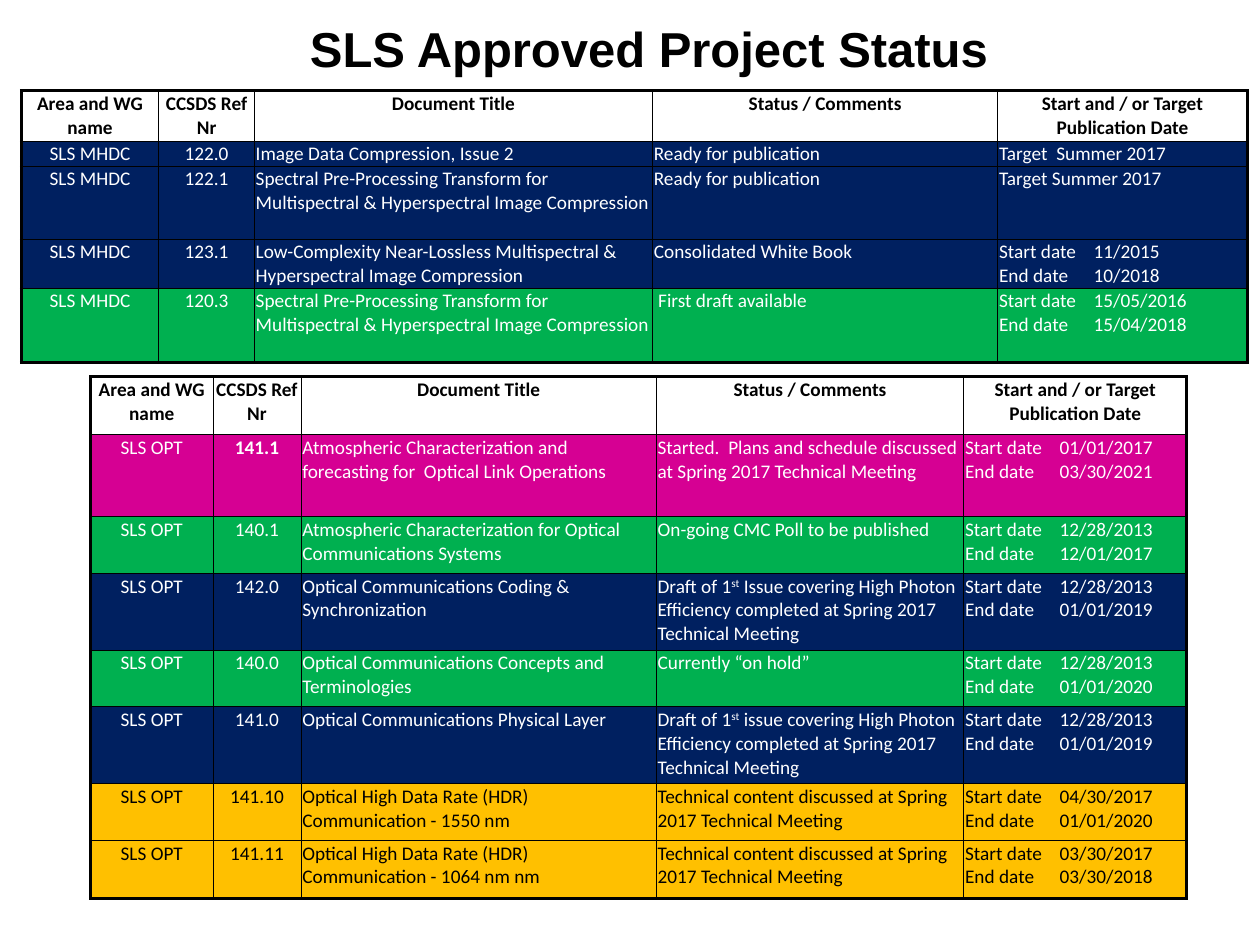
from lxml import etree
from pptx import Presentation
from pptx.dml.color import RGBColor
from pptx.enum import text
from pptx.oxml import ns
from pptx.util import Inches, Pt

BLACK = RGBColor(0x00, 0x00, 0x00)
WHITE = RGBColor(0xFF, 0xFF, 0xFF)
NAVY = RGBColor(0x00, 0x20, 0x60)
GREEN = RGBColor(0x00, 0xB0, 0x50)
MAGENTA = RGBColor(0xD6, 0x00, 0x93)
AMBER = RGBColor(0xFF, 0xC0, 0x00)

INNER_LINE, OUTER_LINE = Pt(0.5), Pt(2)
DATE_TAB = Inches(0.75)
NEW_PROJECT = "141.1"

HEADINGS = ["Area and WG name", "CCSDS Ref Nr", "Document Title",
            "Status / Comments", "Start and / or Target Publication Date"]
SPECTRAL = ("Spectral Pre-Processing Transform for Multispectral & "
            "Hyperspectral Image Compression")
HDR_STATUS = "Technical content discussed at Spring 2017 Technical Meeting"
# Text between carets is superscript.
DRAFT_STATUS = ("Draft of 1^st^ {} covering High Photon Efficiency "
                "completed at Spring 2017 Technical Meeting")


def period(start, end):
    return f"Start date\t{start}\vEnd date\t{end}"


# Each project: row colour, reference, title, status, dates
MHDC_PROJECTS = [
    (NAVY, "122.0", "Image Data Compression, Issue 2",
     "Ready for publication", "Target  Summer 2017"),
    (NAVY, "122.1", SPECTRAL, "Ready for publication", "Target Summer 2017"),
    (NAVY, "123.1",
     "Low-Complexity Near-Lossless Multispectral & Hyperspectral Image Compression",
     "Consolidated White Book", period("11/2015", "10/2018")),
    (GREEN, "120.3", SPECTRAL, " First draft available",
     period("15/05/2016", "15/04/2018")),
]
OPT_PROJECTS = [
    (MAGENTA, NEW_PROJECT,
     "Atmospheric Characterization and forecasting for  Optical Link Operations",
     "Started.  Plans and schedule discussed at Spring 2017 Technical Meeting",
     period("01/01/2017", "03/30/2021")),
    (GREEN, "140.1",
     "Atmospheric Characterization for Optical Communications Systems",
     "On-going CMC Poll to be published", period("12/28/2013", "12/01/2017")),
    (NAVY, "142.0", "Optical Communications Coding & Synchronization",
     DRAFT_STATUS.format("Issue"), period("12/28/2013", "01/01/2019")),
    (GREEN, "140.0", "Optical Communications Concepts and Terminologies",
     "Currently “on hold”", period("12/28/2013", "01/01/2020")),
    (NAVY, "141.0", "Optical Communications Physical Layer",
     DRAFT_STATUS.format("issue"), period("12/28/2013", "01/01/2019")),
    (AMBER, "141.10", "Optical High Data Rate (HDR) Communication - 1550 nm",
     HDR_STATUS, period("04/30/2017", "01/01/2020")),
    (AMBER, "141.11", "Optical High Data Rate (HDR) Communication - 1064 nm nm",
     HDR_STATUS, period("03/30/2017", "03/30/2018")),
]


def add_title(slide, wording):
    title = slide.shapes.title
    title.left, title.top = Inches(0.17), Inches(0.14)
    title.width, title.height = Inches(9.58), Inches(0.58)
    frame = title.text_frame
    frame.auto_size = text.MSO_AUTO_SIZE.NONE
    frame.vertical_anchor = text.MSO_ANCHOR.TOP
    frame.margin_left = Inches(0.44)
    frame.margin_top = frame.margin_right = frame.margin_bottom = Inches(0.06)
    frame.text = wording
    paragraph = frame.paragraphs[0]
    paragraph.alignment = text.PP_ALIGN.CENTER
    paragraph.line_spacing = 0.9
    font = paragraph.font
    font.name, font.size, font.bold = "Arial", Pt(28), True
    font.color.rgb = BLACK


def set_borders(cell, widths):
    properties = cell._tc.get_or_add_tcPr()
    for side, width in widths.items():
        line = etree.SubElement(properties, ns.qn(f"a:ln{side}"), w=str(width))
        fill = etree.SubElement(line, ns.qn("a:solidFill"))
        etree.SubElement(fill, ns.qn("a:srgbClr"), val=str(BLACK))


def add_date_tab(paragraph):
    tabs = etree.SubElement(paragraph._p.get_or_add_pPr(), ns.qn("a:tabLst"))
    etree.SubElement(tabs, ns.qn("a:tab"), pos=str(DATE_TAB), algn="l")


def write_wording(paragraph, wording):
    """Write the text, raising whatever stands between carets."""
    if "^" not in wording:
        paragraph.text = wording
        return
    for index, part in enumerate(wording.split("^")):
        run = paragraph.add_run()
        run.text = part
        if index % 2:
            run._r.get_or_add_rPr().set("baseline", "30000")


def fill_cell(cell, wording, color, bold, centered):
    cell.margin_left = cell.margin_top = cell.margin_right = Inches(0.01)
    cell.margin_bottom = 0
    paragraph = cell.text_frame.paragraphs[0]
    write_wording(paragraph, wording)
    if "\t" in wording:
        add_date_tab(paragraph)
    paragraph.alignment = text.PP_ALIGN.CENTER if centered else text.PP_ALIGN.LEFT
    font = paragraph.font
    font.name, font.size, font.bold = "Calibri", Pt(11), bold
    font.color.rgb = color


def add_project_table(slide, group, projects, left, top, widths, heights):
    rows = [(None, *HEADINGS)]
    rows += [(fill, group, *details) for fill, *details in projects]
    table = slide.shapes.add_table(
        len(rows), len(widths), Inches(left), Inches(top),
        Inches(sum(widths)), Inches(sum(heights))).table
    table.first_row = table.horz_banding = False
    for column, width in zip(table.columns, widths):
        column.width = Inches(width)
    for row, height in zip(table.rows, heights):
        row.height = Inches(height)

    last_row, last_column = len(rows) - 1, len(widths) - 1
    for r, (fill, *wordings) in enumerate(rows):
        is_heading = r == 0
        color = BLACK if is_heading or fill == AMBER else WHITE
        for c, wording in enumerate(wordings):
            cell = table.cell(r, c)
            outer_sides = {"L": c == 0, "R": c == last_column,
                           "T": r == 0, "B": r == last_row}
            set_borders(cell, {side: OUTER_LINE if outer else INNER_LINE
                               for side, outer in outer_sides.items()})
            if is_heading:
                cell.fill.background()
            else:
                cell.fill.solid()
                cell.fill.fore_color.rgb = fill
            fill_cell(cell, wording, color,
                      bold=is_heading or wording == NEW_PROJECT,
                      centered=is_heading or c < 2)


def main():
    deck = Presentation()
    deck.slide_width, deck.slide_height = Inches(10), Inches(7.5)
    slide = deck.slides.add_slide(deck.slide_layouts[5])
    add_title(slide, "SLS Approved Project Status")
    add_project_table(slide, "SLS MHDC", MHDC_PROJECTS, 0.17, 0.72,
                      widths=[1.09, 0.76, 3.16, 2.74, 1.98],
                      heights=[0.4, 0.19, 0.58, 0.38, 0.59])
    add_project_table(slide, "SLS OPT", OPT_PROJECTS, 0.72, 2.99,
                      widths=[0.97, 0.7, 2.82, 2.44, 1.77],
                      heights=[0.46, 0.65, 0.45, 0.61, 0.45, 0.61, 0.45, 0.46])
    deck.save("out.pptx")


if __name__ == "__main__":
    main()
